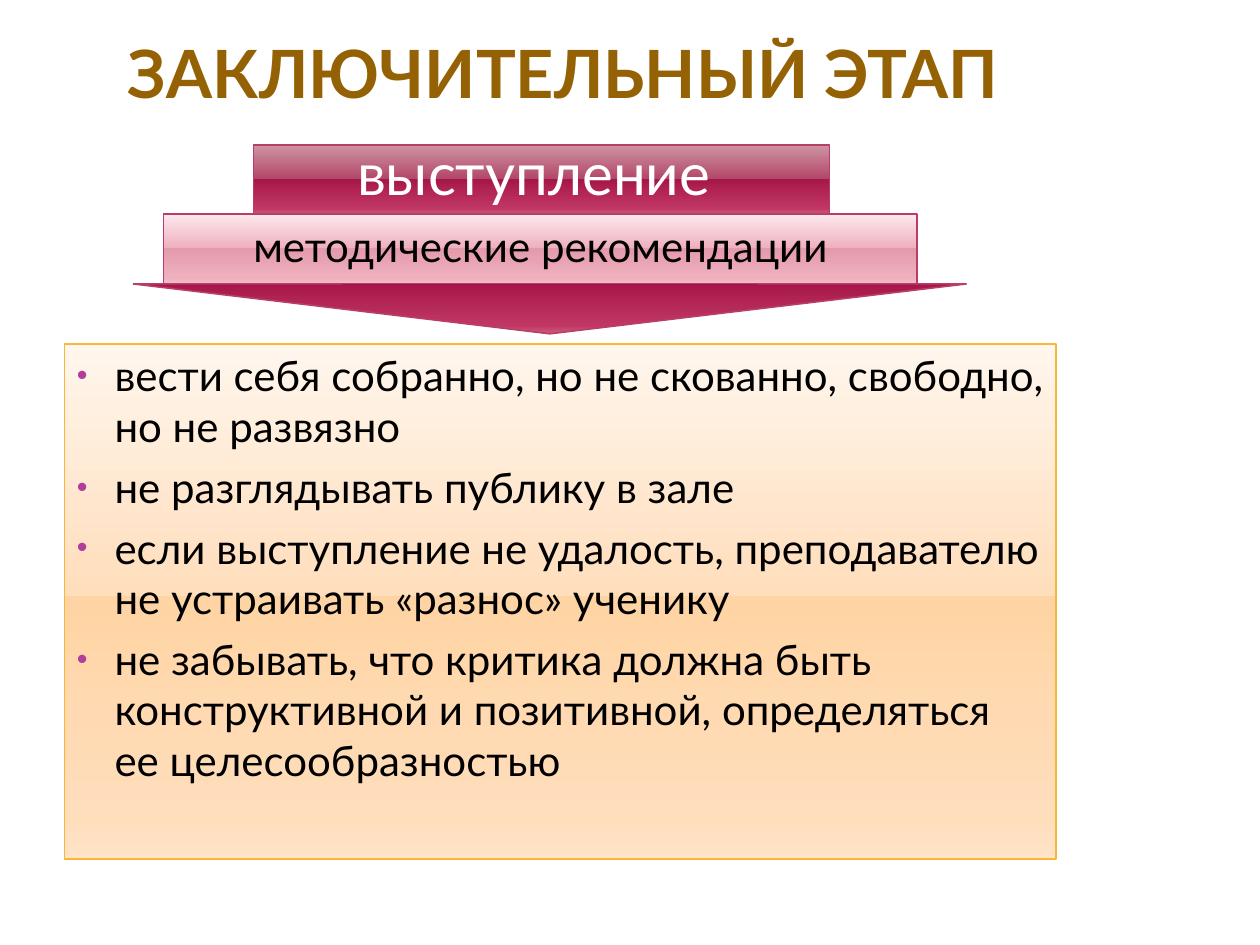
from pptx import Presentation
from pptx.dml.color import RGBColor
from pptx.enum.shapes import MSO_SHAPE
from pptx.enum.text import MSO_ANCHOR, PP_ALIGN
from pptx.oxml import parse_xml
from pptx.oxml.ns import nsdecls
from pptx.util import Cm, Pt

RECT = MSO_SHAPE.RECTANGLE
ARROW = MSO_SHAPE.DOWN_ARROW
TOP = MSO_ANCHOR.TOP
BOTTOM = MSO_ANCHOR.BOTTOM
LEFT = PP_ALIGN.LEFT
CENTER = PP_ALIGN.CENTER

FONT = "Lato"
STOPS = (0, 49, 49, 92, 100)
ORANGE = ("FFF6ED", "FFDEBC", "FFD4A4", "FFDEBC", "FFE3C7")
WINE = ("CE94A2", "B34869", "A61749", "C13764", "CA5D7C")
PINK = ("FCE8ED", "EFB0BE", "E39BAC", "EFB0BE", "F0BEC9")
EDGE = "B83D68"
TIPS = (
    "вести себя собранно, но не скованно, свободно, но не развязно",
    "не разглядывать публику в зале",
    "если выступление не удалость, преподавателю не устраивать «разнос» ученику",
    "не забывать, что критика должна быть конструктивной и позитивной, "
    "определяться ее целесообразностью",
)


def color(code):
    return RGBColor.from_string(code)


def shade(fill, tones):
    """Fill from top to bottom with one tone at each of STOPS."""
    fill.gradient()
    fill.gradient_angle = 270
    stops = "".join(
        f'<a:gs pos="{pos * 1000}"><a:srgbClr val="{tone}"/></a:gs>'
        for pos, tone in zip(STOPS, tones)
    )
    grad = fill._xPr.gradFill
    grad.replace(grad.gsLst, parse_xml(f"<a:gsLst {nsdecls('a')}>{stops}</a:gsLst>"))


def add_block(slide, kind, box, tones, edge):
    block = slide.shapes.add_shape(kind, *map(Cm, box))
    block.shadow.inherit = False
    shade(block.fill, tones)
    block.line.color.rgb = color(edge)
    block.line.width = Pt(0.9)
    return block


def add_dot(para):
    """Give a paragraph a hanging round bullet."""
    props = para._p.get_or_add_pPr()
    props.set("marL", str(Cm(0.76)))
    props.set("indent", str(Cm(-0.76)))
    for part in (
        '<a:buClr {}><a:srgbClr val="B13F9A"/></a:buClr>',
        '<a:buSzPct {} val="73000"/>',
        '<a:buFont {} typeface="Arial"/>',
        '<a:buChar {} char="•"/>',
    ):
        props.append(parse_xml(part.format(nsdecls("a"))))


def write(shape, lines, size, ink, align=CENTER, anchor=TOP, dots=False):
    """Write one paragraph per line and return the text frame."""
    frame = shape.text_frame
    frame.word_wrap = True
    frame.vertical_anchor = anchor
    for num, line in enumerate(lines):
        para = frame.add_paragraph() if num else frame.paragraphs[0]
        para.text = line
        para.alignment = align
        para.space_before = Pt(6 if num else 0)
        if dots:
            add_dot(para)
        para.font.name = FONT
        para.font.size = Pt(size)
        para.font.color.rgb = color(ink)
    return frame


def add_title(slide, text):
    box = slide.shapes.add_textbox(Cm(1.3), Cm(0.33), Cm(20.12), Cm(1.93))
    frame = write(box, [text], 38, "946204", anchor=BOTTOM)
    frame.margin_left = frame.margin_right = Cm(0.13)
    frame.margin_top = frame.margin_bottom = 0
    frame.paragraphs[0].font.bold = True


def main():
    deck = Presentation()
    deck.slide_width, deck.slide_height = Cm(25.4), Cm(19.05)
    slide = deck.slides.add_slide(deck.slide_layouts[6])

    tips = add_block(slide, RECT, (1.3, 6.93, 19.99, 10.39), ORANGE, "F9B639")
    write(tips, TIPS, 24, "000000", align=LEFT, dots=True)
    add_title(slide, "ЗАКЛЮЧИТЕЛЬНЫЙ ЭТАП")

    add_block(slide, ARROW, (2.69, 4.72, 16.79, 2.01), WINE, EDGE)
    speech = add_block(slide, RECT, (5.11, 2.92, 11.61, 1.4), WINE, EDGE)
    frame = write(speech, ["выступление "], 33.3, "FFFFFF")
    frame.paragraphs[0].line_spacing = 0.8
    advice = add_block(slide, RECT, (3.3, 4.32, 15.19, 1.4), PINK, EDGE)
    write(advice, ["методические рекомендации"], 24, "000000")

    deck.save("out.pptx")


if __name__ == "__main__":
    main()
